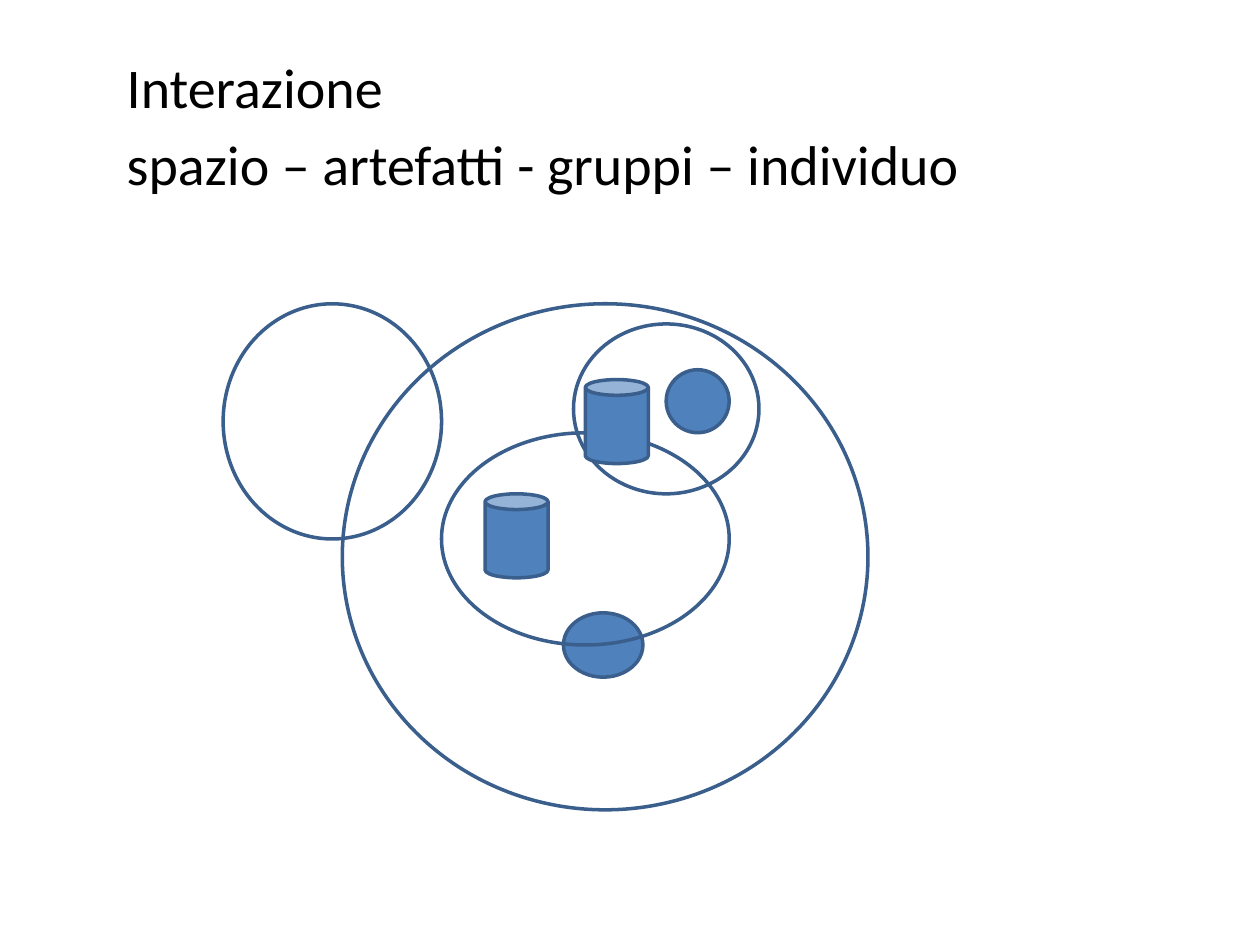
"""Build a slide of nested circles showing space, artefacts, groups and individual."""
import pptx
import pptx.util
import pptx.dml.color
import pptx.enum.shapes

Pt = pptx.util.Pt
RGB = pptx.dml.color.RGBColor.from_string
OVAL = pptx.enum.shapes.MSO_SHAPE.OVAL
CAN = pptx.enum.shapes.MSO_SHAPE.CAN

COLORS = {"text": "000000", "fill": "4F81BD", "line": "3A5F8C"}
LINES = ["Interazione", "spazio – artefatti - gruppi – individuo"]
TEXT_BOX = (65.3, 26.2, 550, 436)
CAN_SIZE = (36, 48)
SHAPES = [
    (OVAL, (195.6, 173.6, 300.4, 289.2), False),
    (OVAL, (322, 350.2, 45.4, 36.8), True),
    (OVAL, (327.7, 185.1, 106, 97.1), False),
    (OVAL, (380.7, 211.3, 36, 36), True),
    (OVAL, (252.3, 247.3, 164.4, 121.3), False),
    (OVAL, (127.5, 173.6, 124.8, 134.4), False),
    (CAN, (277.2, 282.2, *CAN_SIZE), True),
    (CAN, (334.5, 216.9, *CAN_SIZE), True),
]


def add_text(slide):
    tf = slide.shapes.add_textbox(*map(Pt, TEXT_BOX)).text_frame
    tf.word_wrap = True
    for i, line in enumerate(LINES):
        p = tf.paragraphs[0] if i == 0 else tf.add_paragraph()
        p.text = line
        p.space_before = Pt(6)
        p.font.name = "Calibri"
        p.font.size = Pt(32)
        p.font.color.rgb = RGB(COLORS["text"])


def add_shape(slide, kind, box, filled):
    sp = slide.shapes.add_shape(kind, *map(Pt, box))
    sp.shadow.inherit = False
    sp.line.color.rgb = RGB(COLORS["line"])
    sp.line.width = Pt(2)
    if filled:
        sp.fill.solid()
        sp.fill.fore_color.rgb = RGB(COLORS["fill"])
    else:
        sp.fill.background()


def main():
    prs = pptx.Presentation()
    prs.slide_width, prs.slide_height = Pt(720), Pt(540)
    slide = prs.slides.add_slide(prs.slide_layouts[6])
    add_text(slide)
    for shape in SHAPES:
        add_shape(slide, *shape)
    prs.save("out.pptx")


if __name__ == "__main__":
    main()
